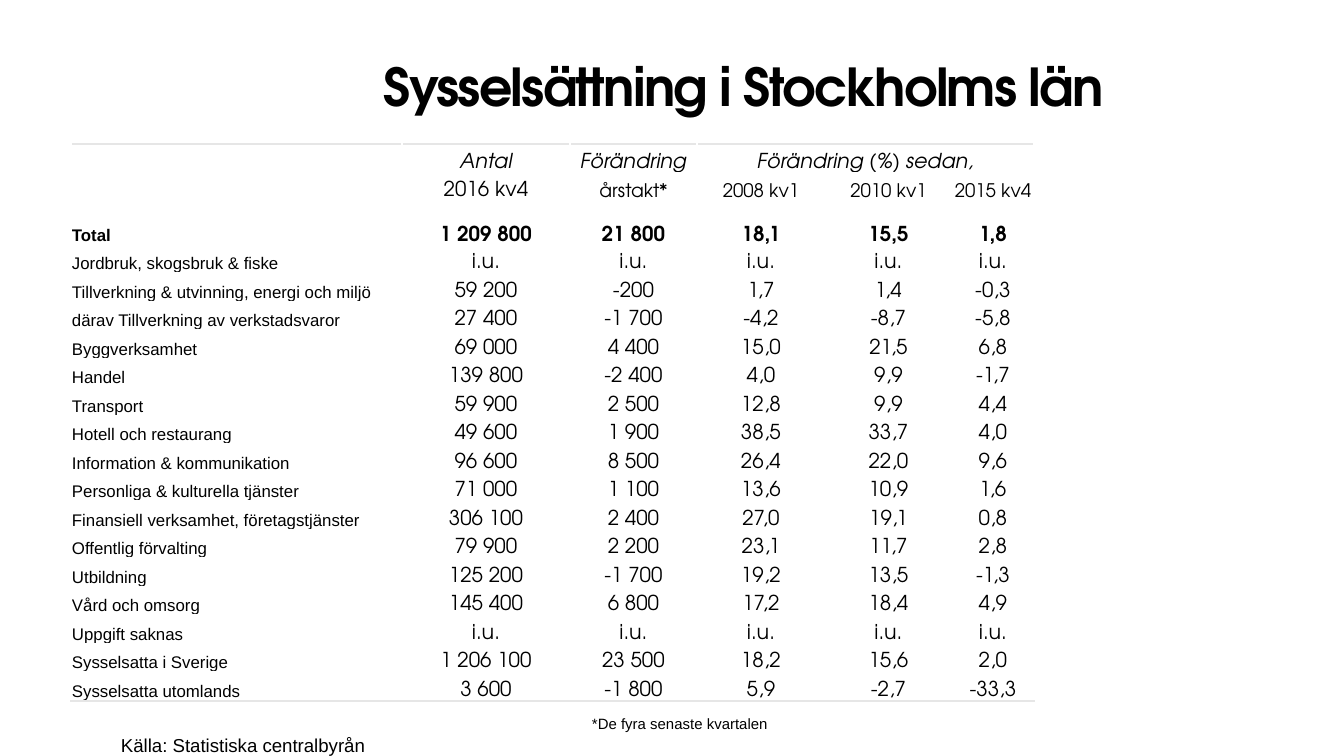
from lxml import etree
from pptx import Presentation
from pptx.dml.color import RGBColor as RGB
from pptx.enum.text import MSO_ANCHOR as Anchor, MSO_AUTO_SIZE as Fit, PP_ALIGN as Align
from pptx.oxml.ns import qn
from pptx.util import Pt

PX = 914400 / 134.4
BLACK = RGB(0x00, 0x00, 0x00)
RULE = RGB(0xE6, 0xE6, 0xE6)
HEAD, BODY = "TeX Gyre Adventor", "Arial"

COLS = [331, 168, 127, 128, 127, 82]
ROWS = [29, 28, 44] + [28, 29] * 8
DATA = [
    ["", "Antal", "Förändring", "Förändring (%) sedan,", "", ""],
    ["", "2016 kv4", "årstakt*", "2008 kv1", "2010 kv1", "2015 kv4"],
    ["Total", "1 209 800", "21 800", "18,1", "15,5", "1,8"],
    ["Jordbruk, skogsbruk & fiske"] + ["i.u."] * 5,
    ["Tillverkning & utvinning, energi och miljö", "59 200", "-200", "1,7", "1,4", "-0,3"],
    ["därav Tillverkning av verkstadsvaror", "27 400", "-1 700", "-4,2", "-8,7", "-5,8"],
    ["Byggverksamhet", "69 000", "4 400", "15,0", "21,5", "6,8"],
    ["Handel", "139 800", "-2 400", "4,0", "9,9", "-1,7"],
    ["Transport", "59 900", "2 500", "12,8", "9,9", "4,4"],
    ["Hotell och restaurang", "49 600", "1 900", "38,5", "33,7", "4,0"],
    ["Information & kommunikation", "96 600", "8 500", "26,4", "22,0", "9,6"],
    ["Personliga & kulturella tjänster", "71 000", "1 100", "13,6", "10,9", "1,6"],
    ["Finansiell verksamhet, företagstjänster", "306 100", "2 400", "27,0", "19,1", "0,8"],
    ["Offentlig förvalting", "79 900", "2 200", "23,1", "11,7", "2,8"],
    ["Utbildning", "125 200", "-1 700", "19,2", "13,5", "-1,3"],
    ["Vård och omsorg", "145 400", "6 800", "17,2", "18,4", "4,9"],
    ["Uppgift saknas"] + ["i.u."] * 5,
    ["Sysselsatta i Sverige", "1 206 100", "23 500", "18,2", "15,6", "2,0"],
    ["Sysselsatta utomlands", "3 600", "-1 800", "5,9", "-2,7", "-33,3"],
]


def px(n):
    return round(n * PX)


def write(frame, text, size=9, face=BODY, bold=False, italic=False,
          align=Align.LEFT, lead=None, track=None):
    """Fill the first paragraph; an empty one only gets its size."""
    para = frame.paragraphs[0]
    para.alignment = align
    if lead:
        para.line_spacing = Pt(lead)
    if not text:
        etree.SubElement(para._p, qn("a:endParaRPr"), sz=str(size * 100))
        return
    run = para.add_run()
    run.text = text
    font = run.font
    font.size, font.name, font.bold, font.italic = Pt(size), face, bold, italic
    font.color.rgb = BLACK
    if track:
        run._r.get_or_add_rPr().set("spc", str(round(track * 100)))


def edge(cell, side):
    """Draw a 1 pt rule on one side (T or B) of a cell."""
    line = etree.Element(qn("a:ln" + side), w=str(Pt(1)))
    fill = etree.SubElement(line, qn("a:solidFill"))
    etree.SubElement(fill, qn("a:srgbClr"), val=str(RULE))
    cell._tc.get_or_add_tcPr().insert(0, line)


class Deck:
    def __init__(self, wide, high):
        self.prs = Presentation()
        self.prs.slide_width, self.prs.slide_height = px(wide), px(high)
        self.slide = self.prs.slides.add_slide(self.prs.slide_layouts[5])

    def frame(self, shape):
        frame = shape.text_frame
        frame.margin_left = frame.margin_right = 0
        frame.margin_top = frame.margin_bottom = 0
        frame.word_wrap = True
        frame.auto_size = Fit.NONE
        frame.vertical_anchor = Anchor.TOP
        return frame

    def title(self, text, x, y, w, h):
        shape = self.slide.shapes.title
        shape.left, shape.top, shape.width, shape.height = map(px, (x, y, w, h))
        write(self.frame(shape), text, size=28, face=HEAD, bold=True, track=-0.9)

    def note(self, text, x, y, w, h, size):
        shape = self.slide.shapes.add_textbox(*map(px, (x, y, w, h)))
        write(self.frame(shape), text, size=size, lead=24)

    def table(self, x, y):
        box = map(px, (x, y, sum(COLS), sum(ROWS)))
        table = self.slide.shapes.add_table(len(ROWS), len(COLS), *box).table
        table.first_row = table.horz_banding = False
        for col, w in zip(table.columns, COLS):
            col.width = px(w)
        for row, h in zip(table.rows, ROWS):
            row.height = px(h)
        for r, line in enumerate(DATA):
            for c, text in enumerate(line):
                self.cell(table.cell(r, c), text, r, c)
        table.cell(0, 3).merge(table.cell(0, 5))

    def cell(self, cell, text, r, c):
        cell.fill.background()
        cell.vertical_anchor = Anchor.BOTTOM
        cell.margin_left = cell.margin_right = cell.margin_top = px(1)
        cell.margin_bottom = 0
        if c == 0 or not text:
            write(cell.text_frame, text, bold=r == 2)
        else:
            small = r == 1 and c > 1
            write(cell.text_frame, text, size=10 if small else 11, face=HEAD,
                  bold=r == 2, italic=r == 0, align=Align.CENTER)
        if r == 0:
            edge(cell, "T")
        if r == len(ROWS) - 1:
            edge(cell, "B")


def main():
    deck = Deck(1344, 756)
    deck.title("Sysselsättning i Stockholms län", 384, 54, 1236, 108)
    deck.note("Källa: Statistiska centralbyrån", 121, 712, 260, 56, size=10)
    deck.table(71, 144)
    deck.note("*De fyra senaste kvartalen", 592, 688, 190, 67, size=8)
    deck.prs.save("out.pptx")


if __name__ == "__main__":
    main()
